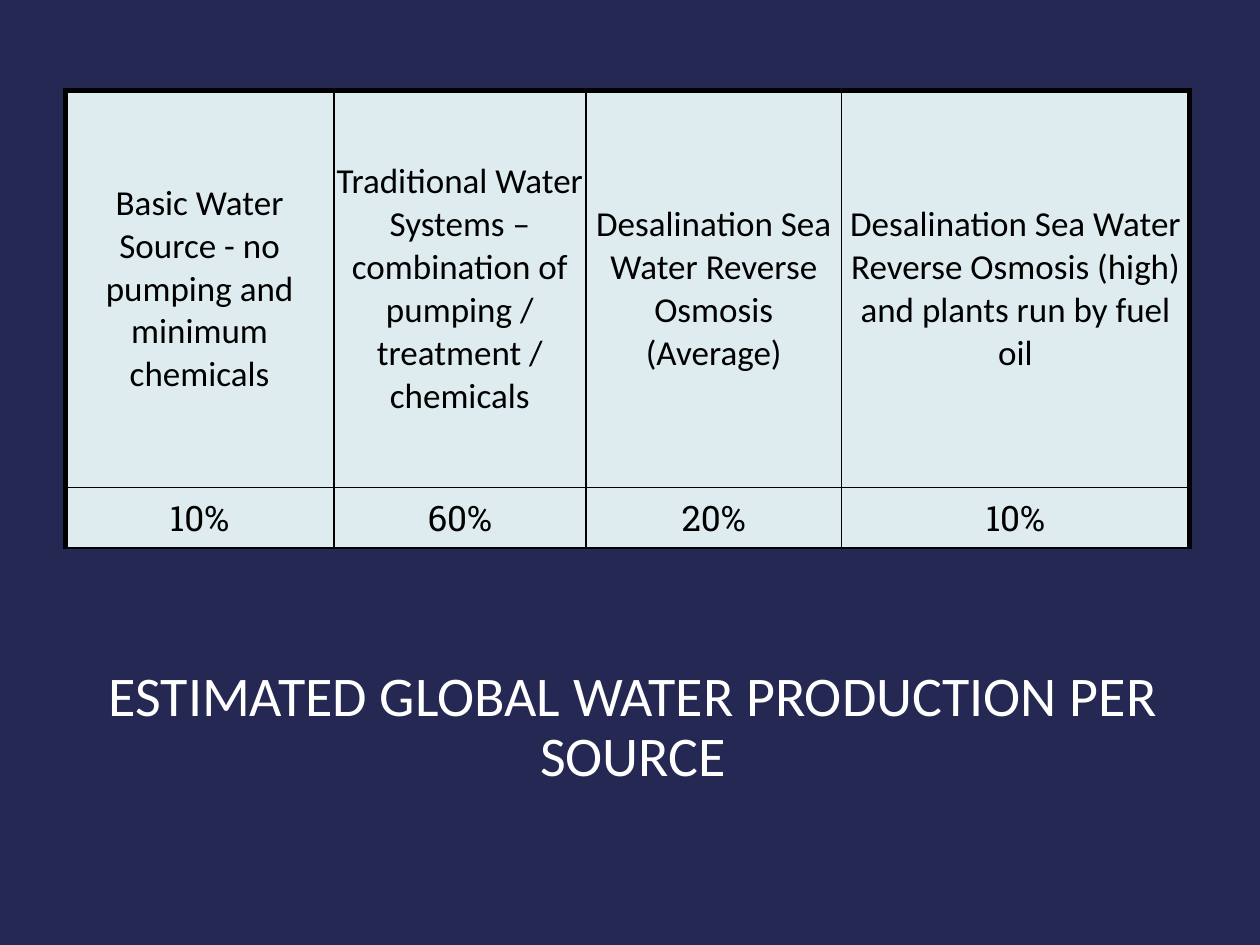
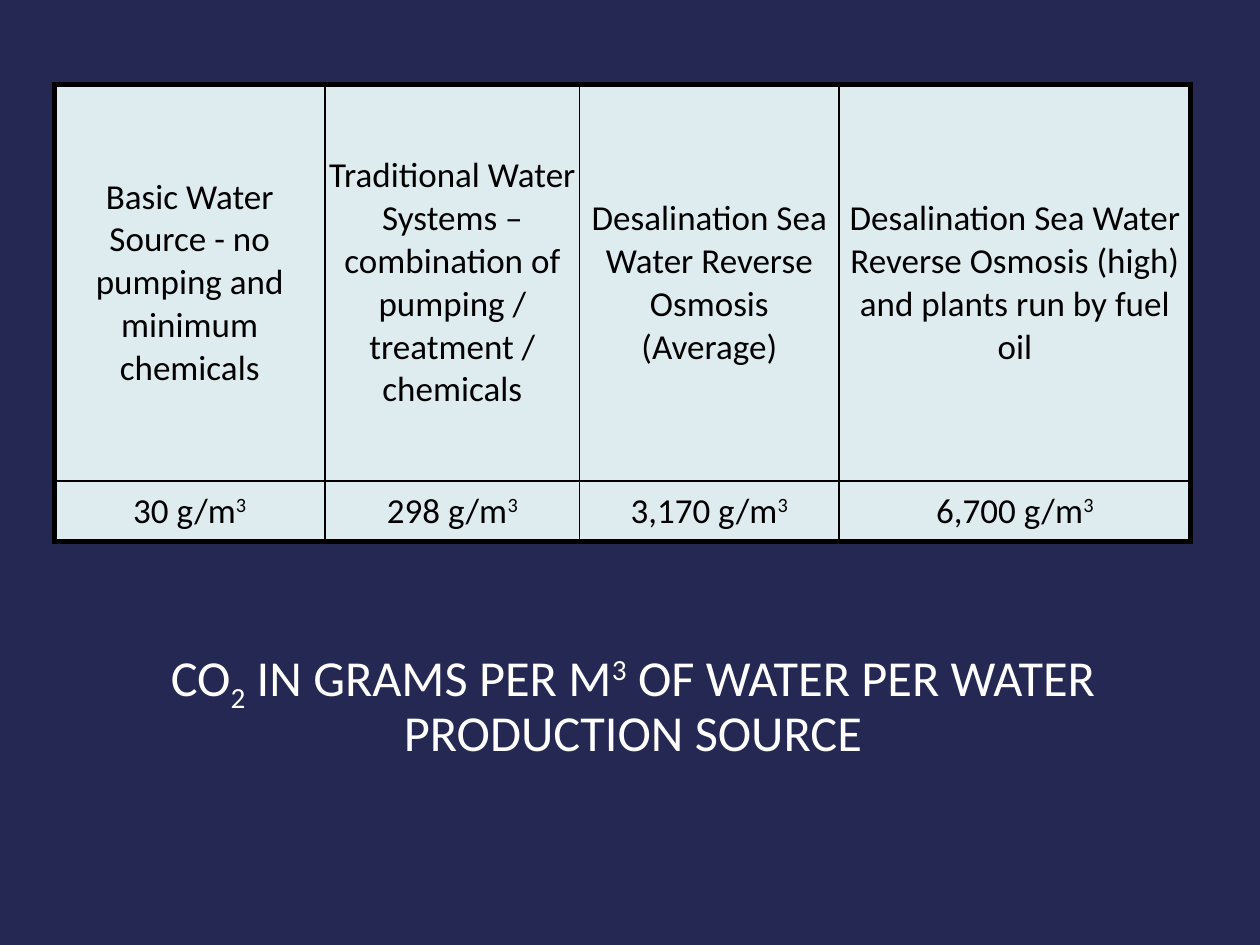
from lxml import etree
from pptx import Presentation
from pptx import util as u
from pptx.dml.color import RGBColor
from pptx.enum import text
from pptx.oxml import ns

HEADS = [
    "Basic Water Source - no pumping and minimum chemicals",
    "Traditional Water Systems – combination of pumping / treatment / chemicals",
    "Desalination Sea Water Reverse Osmosis (Average)",
    "Desalination Sea Water Reverse Osmosis (high) and plants run by fuel oil",
]
SUP, SUB = 30, -25


def hue(code):
    return RGBColor.from_string(code)


class Deck:
    navy, pale, white, black = "242852", "DEECEF", "FFFFFF", "000000"
    face = "Calibri"
    thin, thick = 1, 3
    rows = 226.8, 34.6

    def __init__(self):
        self.file = Presentation()
        self.file.slide_width, self.file.slide_height = u.Pt(720), u.Pt(540)

    def page(self):
        self.slide = self.file.slides.add_slide(self.file.slide_layouts[6])
        fill = self.slide.background.fill
        fill.solid()
        fill.fore_color.rgb = hue(self.navy)

    def label(self, para, parts, size, color, face):
        """Fill a paragraph with (text, baseline percent) parts."""
        para.alignment = text.PP_ALIGN.CENTER
        para.space_after = u.Pt(12)
        font = para.font
        font.size, font.name = u.Pt(size), face
        font.color.rgb = hue(color)
        for words, base in parts:
            run = para.add_run()
            run.text = words
            if base:
                run.font._element.set("baseline", str(base * 1000))

    def title(self, parts, top, size, foot=3.6):
        box = self.slide.shapes.add_textbox(
            u.Pt(38.9), u.Pt(top), u.Pt(645.8), u.Pt(106.6))
        frame = box.text_frame
        frame.word_wrap = True
        frame.vertical_anchor = text.MSO_ANCHOR.BOTTOM
        frame.margin_bottom = u.Pt(foot)
        para = frame.paragraphs[0]
        para.line_spacing = 0.9
        self.label(para, parts, size, self.white, self.face)

    def edge(self, cell, side, width):
        props = cell._tc.get_or_add_tcPr()
        line = etree.SubElement(props, ns.qn("a:ln" + side), w=str(u.Pt(width)))
        fill = etree.SubElement(line, ns.qn("a:solidFill"))
        etree.SubElement(fill, ns.qn("a:srgbClr"), val=self.black)

    def cell(self, cell, parts, face, edges):
        for side, width in edges.items():
            self.edge(cell, side, width)
        cell.fill.solid()
        cell.fill.fore_color.rgb = hue(self.pale)
        cell.margin_left = cell.margin_right = 0
        cell.margin_top = cell.margin_bottom = 0
        cell.vertical_anchor = text.MSO_ANCHOR.MIDDLE
        para = cell.text_frame.paragraphs[0]
        para.space_before = u.Pt(12)
        self.label(para, parts, 20, self.black, face)

    def table(self, left, top, cols, values, face, base):
        """Draw sources over values; base is the width of the bottom border."""
        grid = self.slide.shapes.add_table(
            2, len(cols), u.Pt(left), u.Pt(top),
            u.Pt(sum(cols)), u.Pt(sum(self.rows))).table
        grid.first_row = grid.horz_banding = False
        for col, width in zip(grid.columns, cols):
            col.width = u.Pt(width)
        for row, height in zip(grid.rows, self.rows):
            row.height = u.Pt(height)
        heads = [[(head, 0)] for head in HEADS]
        last = len(cols) - 1
        for r, (line, font) in enumerate([(heads, self.face), (values, face)]):
            for c, parts in enumerate(line):
                edges = {
                    "L": self.thin if c else self.thick,
                    "R": self.thick if c == last else self.thin,
                    "T": self.thin if r else self.thick,
                    "B": base if r else self.thin,
                }
                self.cell(grid.cell(r, c), parts, font, edges)


def share(deck):
    deck.page()
    deck.title([("ESTIMATED GLOBAL WATER PRODUCTION PER SOURCE", 0)], 347.8, 32)
    shares = [[(value, 0)] for value in ("10%", "60%", "20%", "10%")]
    deck.table(37.4, 51.8, [153.4, 144, 146.2, 198.7],
               shares, "Roboto Slab", deck.thin)


def carbon(deck):
    deck.page()
    deck.title([("CO", 0), ("2", SUB), (" IN GRAMS PER M", 0), ("3", SUP),
                (" OF WATER PER WATER PRODUCTION SOURCE", 0)],
               364.3, 28.8, foot=35)
    grams = [[(value + " g/m", 0), ("3", SUP)]
             for value in ("30", "298", "3,170", "6,700")]
    deck.table(31, 48.2, [154.8, 145.4, 148.3, 200.9],
               grams, deck.face, deck.thick)


def main():
    deck = Deck()
    share(deck)
    carbon(deck)
    deck.file.save("out.pptx")


if __name__ == "__main__":
    main()
